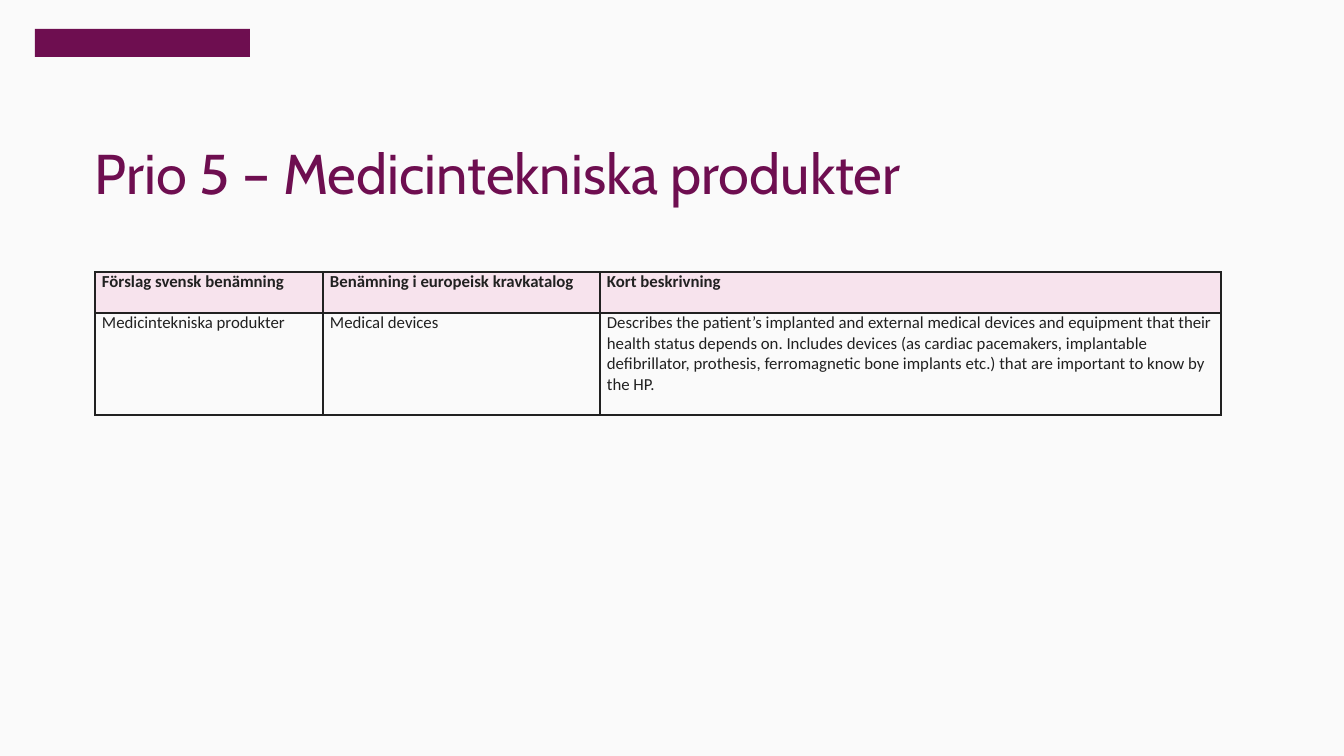
import pptx
import pptx.dml.color
import pptx.enum.shapes
import pptx.enum.text
import pptx.oxml
import pptx.oxml.ns
import pptx.util

PLUM = pptx.dml.color.RGBColor(0x6E, 0x0E, 0x50)
PINK = pptx.dml.color.RGBColor(0xF7, 0xE3, 0xED)
INK = pptx.dml.color.RGBColor(0x21, 0x21, 0x21)
PAPER = pptx.dml.color.RGBColor(0xFA, 0xFA, 0xFA)


def px(count):
    return pptx.util.Emu(round(count * 914400 / 100.8))


def add_borders(cell):
    properties = cell._tc.get_or_add_tcPr()
    for side in ("lnL", "lnR", "lnT", "lnB"):
        properties.append(pptx.oxml.parse_xml(
            f'<a:{side} {pptx.oxml.ns.nsdecls("a")} w="12700"><a:solidFill>'
            f'<a:srgbClr val="{INK}"/></a:solidFill></a:{side}>'))


deck = pptx.Presentation()
deck.slide_width = px(1344)
deck.slide_height = px(756)
slide = deck.slides.add_slide(deck.slide_layouts[6])
slide.background.fill.solid()
slide.background.fill.fore_color.rgb = PAPER

agency_mark = slide.shapes.add_shape(
    pptx.enum.shapes.MSO_SHAPE.RECTANGLE, px(35), px(29), px(215), px(28))
agency_mark.shadow.inherit = False
agency_mark.fill.solid()
agency_mark.fill.fore_color.rgb = PLUM
agency_mark.line.fill.background()

title = slide.shapes.add_textbox(px(95), px(146), px(1155), px(61)).text_frame
title.word_wrap = True
title.vertical_anchor = pptx.enum.text.MSO_ANCHOR.BOTTOM
title.margin_left = title.margin_right = title.margin_top = title.margin_bottom = 0
heading = title.paragraphs[0]
heading.text = "Prio 5 – Medicintekniska produkter"
heading.line_spacing = 0.9
heading.font.name = "Cabin"
heading.font.size = pptx.util.Pt(40)
heading.font.color.rgb = PLUM

terms = [
    ("Förslag svensk benämning", "Benämning i europeisk kravkatalog", "Kort beskrivning"),
    ("Medicintekniska produkter", "Medical devices",
     "Describes the patient’s implanted and external medical devices and equipment "
     "that their health status depends on. Includes devices (as cardiac pacemakers, "
     "implantable defibrillator, prothesis, ferromagnetic bone implants etc.) that are "
     "important to know by the HP."),
]
column_widths = (228, 277, 621)
row_heights = (41, 102)

term_table = slide.shapes.add_table(
    len(terms), len(column_widths), px(95), px(272),
    px(sum(column_widths)), px(sum(row_heights))).table
term_table.horz_banding = False
for column, width in zip(term_table.columns, column_widths):
    column.width = px(width)
for row, height in zip(term_table.rows, row_heights):
    row.height = px(height)

for row_index, row_terms in enumerate(terms):
    for column_index, term in enumerate(row_terms):
        cell = term_table.cell(row_index, column_index)
        cell.margin_left = cell.margin_right = px(7)
        cell.margin_top = cell.margin_bottom = 0
        add_borders(cell)
        if row_index == 0:
            cell.fill.solid()
            cell.fill.fore_color.rgb = PINK
        else:
            cell.fill.background()
        paragraph = cell.text_frame.paragraphs[0]
        paragraph.text = term
        paragraph.font.name = "Calibri"
        paragraph.font.size = pptx.util.Pt(12)
        paragraph.font.bold = row_index == 0
        paragraph.font.color.rgb = INK

deck.save("out.pptx")
